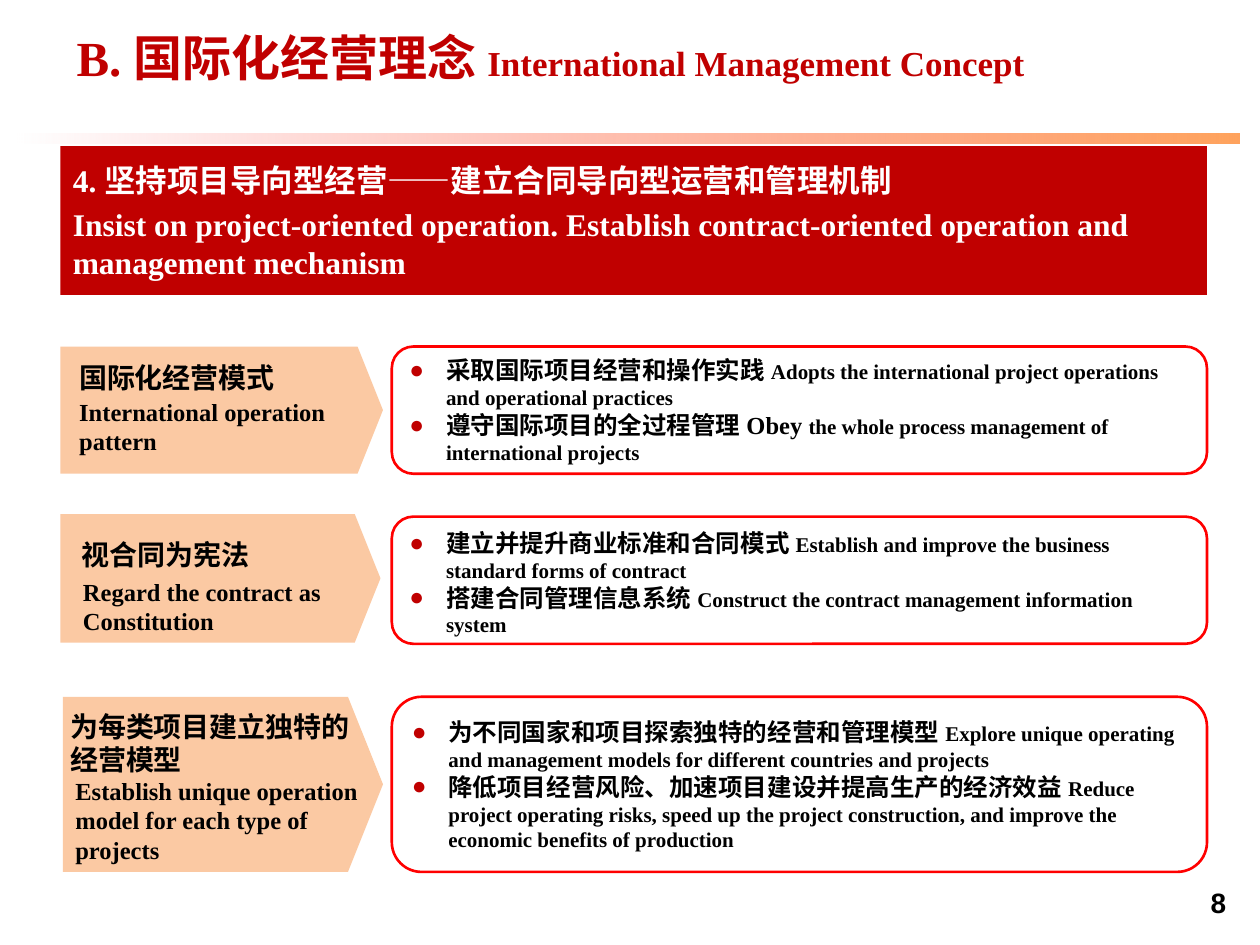
from lxml.etree import SubElement
from pptx import Presentation
from pptx.dml.color import RGBColor
from pptx.enum.shapes import MSO_SHAPE as Preset
from pptx.enum.text import MSO_ANCHOR as Anchor, PP_ALIGN as Align
from pptx.oxml.ns import qn
from pptx.util import Inches, Pt

DARK_RED = RGBColor(0xC0, 0x00, 0x00)
RED = RGBColor(0xFF, 0x00, 0x00)
ORANGE = RGBColor(0xFF, 0x75, 0x0D)
PEACH = RGBColor(0xFB, 0xC9, 0xA3)
BLACK = RGBColor(0x00, 0x00, 0x00)
WHITE = RGBColor(0xFF, 0xFF, 0xFF)
SERIF = "Times New Roman"

presentation = Presentation()
presentation.slide_width = Inches(10)
presentation.slide_height = Inches(7.5)
slide = presentation.slides.add_slide(presentation.slide_layouts[6])


def add_block(box, preset=None, fill=None, line=None):
    lengths = [Inches(value) for value in box]
    if preset is None:
        return slide.shapes.add_textbox(*lengths)
    shape = slide.shapes.add_shape(preset, *lengths)
    shape.shadow.inherit = False
    if fill is None:
        shape.fill.background()
    else:
        shape.fill.solid()
        shape.fill.fore_color.rgb = fill
    if line is None:
        shape.line.fill.background()
    else:
        shape.line.color.rgb = line
        shape.line.width = Pt(1.5)
    return shape


def write_text(shape, paragraphs, color=BLACK, name=SERIF, align=Align.LEFT,
               anchor=Anchor.TOP, space=0, bullet=False):
    frame = shape.text_frame
    frame.word_wrap = True
    frame.vertical_anchor = anchor
    for index, runs in enumerate(paragraphs):
        paragraph = frame.add_paragraph() if index else frame.paragraphs[0]
        paragraph.alignment = align
        if index:
            paragraph.space_before = Pt(space)
        if bullet:
            properties = paragraph._p.get_or_add_pPr()
            properties.set("marL", str(Inches(0.29)))
            properties.set("indent", str(Inches(-0.29)))
            bullet_color = SubElement(properties, qn("a:buClr"))
            SubElement(bullet_color, qn("a:srgbClr"), val=str(DARK_RED))
            SubElement(properties, qn("a:buFont"), typeface="Arial")
            SubElement(properties, qn("a:buChar"), char="●")
        for text, size in runs:
            run = paragraph.add_run()
            run.text = text
            run.font.color.rgb = color
            for attribute, value in {"name": name, "size": Pt(size), "bold": True}.items():
                setattr(run.font, attribute, value)


rule = add_block((0.11, 1.06, 9.73, 0.08), Preset.RECTANGLE, ORANGE)
rule.fill.gradient()
rule.fill.gradient_angle = 0
for stop, color, position in zip(rule.fill.gradient_stops, (RED, ORANGE), (0, 1)):
    stop.color.rgb = color
    stop.position = position
for color_element, alpha in zip(rule._element.spPr.iter(qn("a:srgbClr")), (0, 67000)):
    SubElement(color_element, qn("a:alpha"), val=str(alpha))

title = add_block((0.51, 0.17, 9.16, 0.57))
write_text(title, [[("B. 国际化经营理念 ", 28), ("International Management Concept", 20)]], DARK_RED)

banner = add_block((0.48, 1.16, 9.1, 1.18), Preset.RECTANGLE, DARK_RED)
write_text(banner, [
    [("4. 坚持项目导向型经营——建立合同导向型运营和管理机制", 18)],
    [("Insist on project-oriented operation. Establish contract-oriented operation and "
      "management mechanism", 18)],
], WHITE, anchor=Anchor.MIDDLE, space=3.6)

rows = [
    {
        "panel": (3.11, 2.75, 6.47, 1.01), "arrow": (0.48, 2.75, 2.56, 1.01),
        "anchor": Anchor.MIDDLE,
        "labels": [
            ((0.53, 2.81, 2.35, 0.37), "国际化经营模式", 16),
            ((0.53, 3.1, 2.35, 0.57), "International operation pattern", 14),
        ],
        "points": [
            ("采取国际项目经营和操作实践 ",
             "Adopts the international project operations and operational practices"),
            ("遵守国际项目的全过程管理 Obey ",
             "the whole process management of international projects"),
        ],
    },
    {
        "panel": (3.11, 4.1, 6.47, 1.01), "arrow": (0.48, 4.08, 2.54, 1.02),
        "anchor": Anchor.TOP,
        "labels": [
            ((0.55, 4.22, 1.56, 0.37), "视合同为宪法", 16),
            ((0.56, 4.53, 2.19, 0.57), "Regard the contract as Constitution", 14),
        ],
        "points": [
            ("建立并提升商业标准和合同模式 ",
             "Establish and improve the business standard forms of contract"),
            ("搭建合同管理信息系统 ",
             "Construct the contract management information system"),
        ],
    },
    {
        "panel": (3.11, 5.53, 6.47, 1.39), "arrow": (0.5, 5.53, 2.54, 1.39),
        "anchor": Anchor.MIDDLE,
        "labels": [
            ((0.46, 5.58, 2.56, 0.64), "为每类项目建立独特的经营模型", 16),
            ((0.5, 6.11, 2.5, 0.81),
             "Establish unique operation model for each type of projects", 14),
        ],
        "points": [
            ("为不同国家和项目探索独特的经营和管理模型 ",
             "Explore unique operating and management models for different countries and projects"),
            ("降低项目经营风险、加速项目建设并提高生产的经济效益 ",
             "Reduce project operating risks, speed up the project construction, and improve "
             "the economic benefits of production"),
        ],
    },
]
margins = {"margin_left": 0.09, "margin_top": 0.04, "margin_right": 0.09, "margin_bottom": 0.04}

for row in rows:
    panel = add_block(row["panel"], Preset.ROUNDED_RECTANGLE, line=RED)
    panel.adjustments[0] = 0.17
    for attribute, value in margins.items():
        setattr(panel.text_frame, attribute, Inches(value))
    points = [[(chinese, 14), (english, 12)] for chinese, english in row["points"]]
    write_text(panel, points, anchor=row["anchor"], bullet=True)

    arrow = add_block(row["arrow"], Preset.PENTAGON, PEACH)
    arrow.adjustments[0] = 0.2
    for box, text, size in row["labels"]:
        write_text(add_block(box), [[(text, size)]])

page_number = add_block((7.5, 6.98, 2.33, 0.52))
write_text(page_number, [[("8", 16)]], name="Arial", align=Align.RIGHT)

presentation.save("out.pptx")
